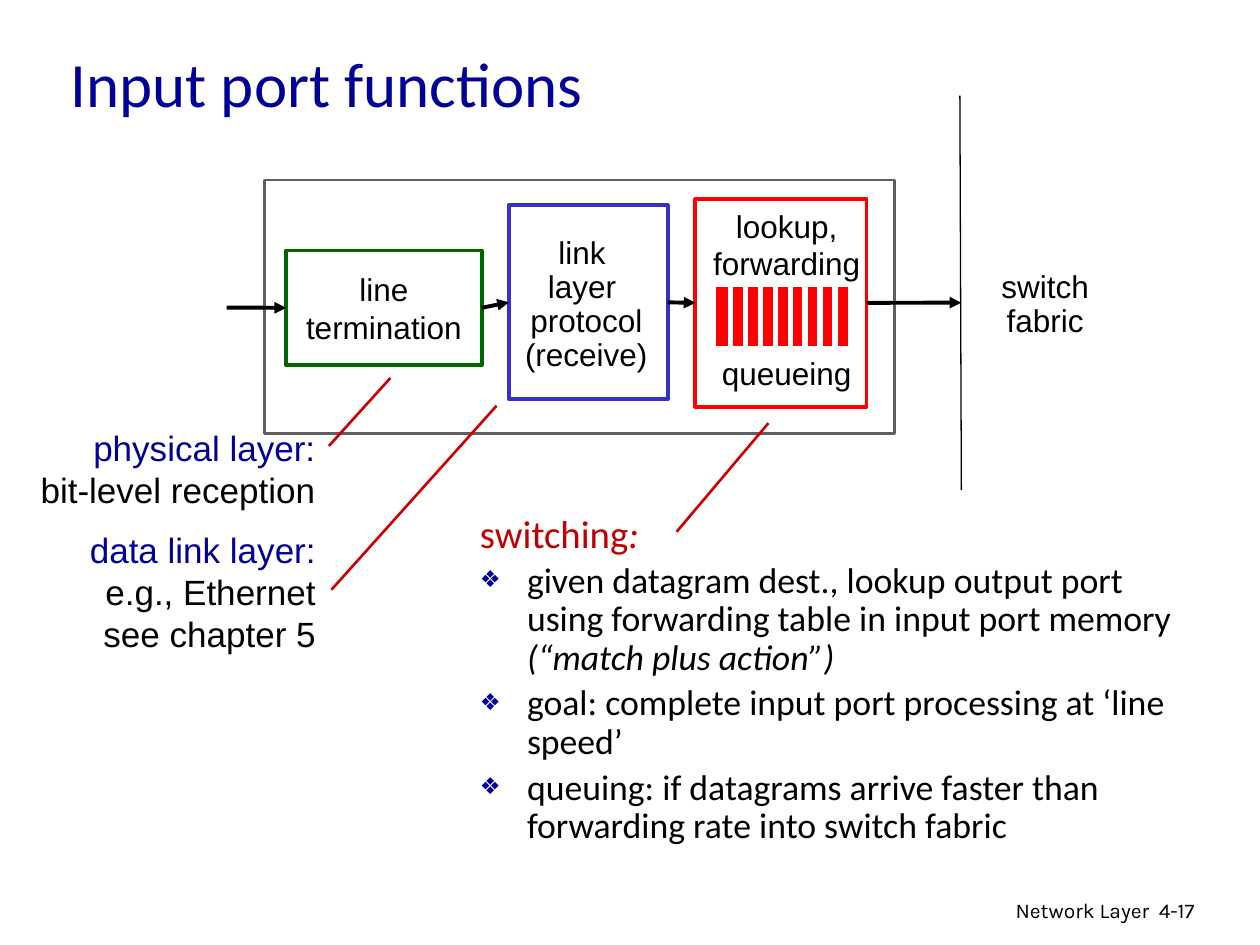
from lxml.etree import SubElement
from pptx import Presentation
from pptx.dml.color import RGBColor
from pptx.enum.shapes import MSO_CONNECTOR, MSO_SHAPE
from pptx.enum.text import MSO_ANCHOR, MSO_AUTO_SIZE, PP_ALIGN
from pptx.oxml.ns import qn
from pptx.util import Cm, Pt

BLACK, WHITE, NAVY, RED = "000000", "FFFFFF", "000099", "FF0000"
DARK_RED, CALLOUT_RED = "C00000", "CC0000"
LEFT, CENTER, RIGHT = PP_ALIGN.LEFT, PP_ALIGN.CENTER, PP_ALIGN.RIGHT
LEFT_SIDE, RIGHT_SIDE = 1, 3


def rgb(code):
    return RGBColor.from_string(code)


def write(frame, paragraphs, size=18, font="Arial", color=BLACK, align=CENTER,
          spacing=None, before=0, anchor=MSO_ANCHOR.TOP, wrap=False):
    """Fill a frame; a paragraph is a string or a list of (text, overrides) runs."""
    frame.word_wrap = wrap
    frame.auto_size = MSO_AUTO_SIZE.NONE
    frame.vertical_anchor = anchor
    for index, content in enumerate(paragraphs):
        paragraph = frame.paragraphs[0] if index == 0 else frame.add_paragraph()
        paragraph.alignment = align
        paragraph.space_before = Pt(before)
        if spacing:
            paragraph.line_spacing = spacing
        runs = [(content, {})] if isinstance(content, str) else content
        for text, overrides in runs:
            run = paragraph.add_run()
            run.text = text
            run.font.name = font
            run.font.size = Pt(overrides.get("size", size))
            run.font.color.rgb = rgb(overrides.get("color", color))
            run.font.italic = overrides.get("italic")


def set_bullet(paragraph, mark=None):
    """Give a paragraph a hanging indent, with a navy mark or none."""
    properties = paragraph._p.get_or_add_pPr()
    properties.set("marL", str(Cm(0.95)))
    properties.set("indent", str(-Cm(0.95)))
    if mark is None:
        SubElement(properties, qn("a:buNone"))
        return
    mark_color = SubElement(properties, qn("a:buClr"))
    SubElement(mark_color, qn("a:srgbClr"), val=NAVY)
    SubElement(properties, qn("a:buSzPct"), val="65000")
    SubElement(properties, qn("a:buChar"), char=mark)


def place(shape, left, top, width, height):
    shape.left, shape.top = Cm(left), Cm(top)
    shape.width, shape.height = Cm(width), Cm(height)


def add_box(shapes, left, top, width, height, fill=WHITE, line=None, weight=2.25):
    box = shapes.add_shape(MSO_SHAPE.RECTANGLE, Cm(left), Cm(top), Cm(width), Cm(height))
    box.shadow.inherit = False
    box.fill.solid()
    box.fill.fore_color.rgb = rgb(fill)
    if line:
        box.line.color.rgb = rgb(line)
        box.line.width = Pt(weight)
    else:
        box.line.fill.background()
    return box


def add_label(shapes, left, top, width, height, paragraphs, **text_format):
    label = shapes.add_textbox(Cm(left), Cm(top), Cm(width), Cm(height))
    write(label.text_frame, paragraphs, **text_format)
    return label


def add_line(shapes, start, end, color=BLACK, weight=1.5, arrow=False):
    line = shapes.add_connector(MSO_CONNECTOR.STRAIGHT, Cm(start[0]), Cm(start[1]),
                                Cm(end[0]), Cm(end[1]))
    line.line.color.rgb = rgb(color)
    line.line.width = Pt(weight)
    if arrow:
        SubElement(line.line._get_or_add_ln(), qn("a:tailEnd"), type="triangle")
    SubElement(line._element.spPr, qn("a:effectLst"))
    return line


def add_flow(shapes, start, end, source=None, target=None):
    """Draw an arrow that leaves source on the right and enters target on the left."""
    arrow = add_line(shapes, start, end, weight=2.25, arrow=True)
    if source:
        arrow.begin_connect(source, RIGHT_SIDE)
    if target:
        arrow.end_connect(target, LEFT_SIDE)


def add_queue(shapes):
    queue = shapes.add_group_shape().shapes
    add_box(queue, 14.38, 5.74, 2.77, 1.3, fill=RED, line=WHITE, weight=3)
    for slot in range(8):
        x = 14.73 + 0.3 * slot
        add_line(queue, (x, 5.76), (x, 7), WHITE, 3)


def add_port_diagram(shapes):
    add_box(shapes, 5.33, 3.63, 12.7, 5.11, line="5F5F5F", weight=1.5)
    termination = add_box(shapes, 5.77, 5.05, 3.94, 2.31, line="006600")
    write(termination.text_frame, ["line", "termination"], anchor=MSO_ANCHOR.MIDDLE)
    link = add_box(shapes, 10.26, 4.14, 3.2, 3.91, line="3333CC")
    lookup = add_box(shapes, 14.02, 4.01, 3.45, 4.19, line=RED)

    add_flow(shapes, (4.57, 6.2), (5.77, 6.2), target=termination)
    add_flow(shapes, (9.71, 6.2), (10.26, 6.1), termination, link)
    add_flow(shapes, (13.46, 6.1), (14.02, 6.1), link, lookup)
    add_flow(shapes, (17.47, 6.1), (19.38, 6.1), source=lookup)

    for left, words in ((10.36, ["link ", "layer ", "protocol", "(receive)"]),
                        (19.61, ["switch", "fabric"])):
        label = add_box(shapes, left, 5, 2.92, 2.31)
        write(label.text_frame, words, spacing=0.9, anchor=MSO_ANCHOR.MIDDLE)
    tasks = add_label(shapes, 14.12, 4.04, 3.48, 4.06,
                      ["lookup,", "forwarding", "queueing"])
    tasks.text_frame.paragraphs[-1].space_before = Pt(41)
    add_line(shapes, (19.35, 1.93), (19.38, 9.88), weight=0.75)
    add_queue(shapes)


def add_callouts(shapes):
    add_label(shapes, 0.56, 8.48, 6.05, 1.96,
              [[("physical layer:", {"color": NAVY})], "bit-level reception"],
              size=20, align=RIGHT)
    add_label(shapes, 1.57, 10.52, 5.05, 2.79,
              [[("data link layer:", {"color": NAVY})], "e.g., Ethernet", "see chapter 5"],
              size=20, align=RIGHT)
    for start, end in (((6.63, 8.99), (7.87, 7.62)),
                       ((6.68, 11.89), (10.01, 8.18)),
                       ((13.64, 10.72), (15.49, 8.53))):
        add_line(shapes, start, end, CALLOUT_RED)


def fill_switching_list(body):
    place(body, 9.42, 10.41, 15.16, 7.42)
    heading = {"size": 22.2, "color": DARK_RED}
    write(body.text_frame, [
        [("switching", heading), (":", {**heading, "italic": True})],
        [("given datagram dest., lookup output port using forwarding table "
          "in input port memory ", {}), ("(“match plus action”)", {"italic": True})],
        "goal: complete input port processing at ‘line speed’",
        "queuing: if datagrams arrive faster than forwarding rate into switch fabric",
    ], size=20.4, font="Calibri", align=LEFT, spacing=0.9, before=4, wrap=True)
    first, *points = body.text_frame.paragraphs
    first.line_spacing = 0.7
    set_bullet(first)
    for point in points:
        set_bullet(point, "❖")


def main():
    presentation = Presentation()
    presentation.slide_width, presentation.slide_height = Cm(25.4), Cm(19.05)
    slide = presentation.slides.add_slide(presentation.slide_layouts[1])
    shapes = slide.shapes

    title = shapes.title
    place(title, 1.17, 0.81, 21.59, 1.7)
    write(title.text_frame, ["Input port functions"], size=36, font="Calibri",
          color=NAVY, align=LEFT, anchor=MSO_ANCHOR.MIDDLE, wrap=True)
    add_port_diagram(shapes)
    fill_switching_list(slide.placeholders[1])
    add_callouts(shapes)

    footer = {"size": 12, "font": "Karla", "wrap": True}
    add_label(shapes, 15.37, 17.96, 8.05, 0.78, ["Network Layer"], align=RIGHT, **footer)
    add_label(shapes, 23.11, 17.96, 1.88, 0.76, ["4-17"], align=LEFT, **footer)
    presentation.save("out.pptx")


if __name__ == "__main__":
    main()
